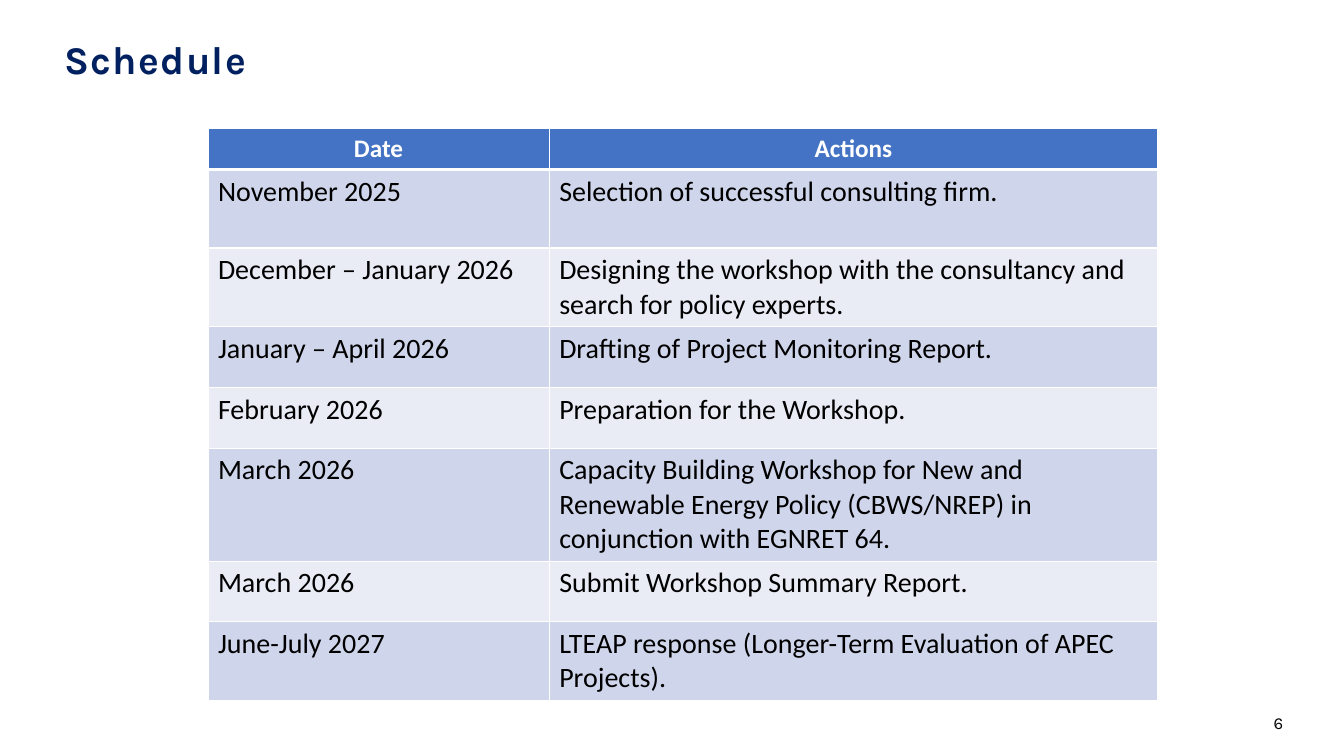
from lxml.etree import SubElement
from pptx import Presentation
from pptx.dml.color import RGBColor
from pptx.enum.text import MSO_ANCHOR, MSO_AUTO_SIZE, PP_ALIGN
from pptx.oxml.ns import qn
from pptx.util import Cm, Pt

SCHEDULE = [
    ("Date", "Actions", 1.04),
    ("November 2025", "Selection of successful consulting firm.", 1.98),
    ("December – January 2026",
     "Designing the workshop with the consultancy and search for policy experts.", 1.98),
    ("January – April 2026", "Drafting of Project Monitoring Report.", 1.53),
    ("February 2026", "Preparation for the Workshop.", 1.53),
    ("March 2026",
     "Capacity Building Workshop for New and Renewable Energy Policy (CBWS/NREP) "
     "in conjunction with EGNRET 64.", 2.6),
    ("March 2026", "Submit Workshop Summary Report.", 1.53),
    ("June-July 2027", "LTEAP response (Longer-Term Evaluation of APEC Projects).", 1.53),
]


def colour(code):
    return RGBColor.from_string(code)


def apply(target, values):
    for name, value in values.items():
        setattr(target, name, value)


class SlideBuilder:
    """Holds the style and the current slide, and adds each kind of element."""

    fonts = {
        "title": {"name": "Karla", "size": Pt(28), "bold": True},
        "number": {"name": "Karla", "size": Pt(12), "bold": False},
        "header": {"name": "Calibri", "size": Pt(18), "bold": True},
        "body": {"name": "Calibri", "size": Pt(20), "bold": False},
    }
    inks = {"title": "002060", "number": "000000", "header": "FFFFFF", "body": "000000"}
    header_fill = "4472C4"
    band_fills = ("E9EBF5", "CFD5EA")
    border = "FFFFFF"

    def __init__(self, deck):
        self.page = deck.slides.add_slide(deck.slide_layouts[5])

    def add_text(self, frame, text, style, **layout):
        para = frame.paragraphs[0]
        apply(para, layout)
        span = para.add_run()
        span.text = text
        apply(span.font, self.fonts[style])
        span.font.color.rgb = colour(self.inks[style])
        return span

    def title(self, text, left, top, width, height):
        box = self.page.shapes.title
        apply(box, {"left": Cm(left), "top": Cm(top), "width": Cm(width), "height": Cm(height)})
        apply(box.text_frame, {"vertical_anchor": MSO_ANCHOR.TOP, "word_wrap": True,
                               "auto_size": MSO_AUTO_SIZE.NONE})
        span = self.add_text(box.text_frame, text, "title", alignment=PP_ALIGN.JUSTIFY,
                             line_spacing=0.98, space_before=Pt(0), space_after=Pt(8))
        span._r.get_or_add_rPr().set("spc", "100")
        box.text_frame.paragraphs[0]._p.get_or_add_pPr().set("marL", str(Cm(0.89)))

    def number(self, text, left, top, width, height):
        box = self.page.shapes.add_textbox(Cm(left), Cm(top), Cm(width), Cm(height))
        apply(box.text_frame, {"vertical_anchor": MSO_ANCHOR.MIDDLE, "word_wrap": True})
        self.add_text(box.text_frame, text, "number", alignment=PP_ALIGN.RIGHT)

    def edge(self, cell, side, points):
        line = SubElement(cell._tc.get_or_add_tcPr(), qn(f"a:ln{side}"), w=str(Pt(points)))
        fill = SubElement(line, qn("a:solidFill"))
        SubElement(fill, qn("a:srgbClr"), val=self.border)

    def table(self, rows, left, top, widths):
        heights = [row[-1] for row in rows]
        frame = self.page.shapes.add_table(len(rows), len(widths), Cm(left), Cm(top),
                                           Cm(sum(widths)), Cm(sum(heights)))
        grid = frame.table
        for column, width in zip(grid.columns, widths):
            column.width = Cm(width)
        for index, (*texts, height) in enumerate(rows):
            grid.rows[index].height = Cm(height)
            header = index == 0
            fill = self.header_fill if header else self.band_fills[index % 2]
            for column, text in enumerate(texts):
                cell = grid.cell(index, column)
                for side in "LRTB":
                    thick = (header and side == "B") or (index == 1 and side == "T")
                    self.edge(cell, side, 3 if thick else 1)
                cell.fill.solid()
                cell.fill.fore_color.rgb = colour(fill)
                self.add_text(cell.text_frame, text, "header" if header else "body",
                              alignment=PP_ALIGN.CENTER if header else PP_ALIGN.LEFT)


def main():
    deck = Presentation()
    apply(deck, {"slide_width": Cm(33.87), "slide_height": Cm(19.05)})
    builder = SlideBuilder(deck)
    builder.title("Schedule", 0.48, 0.81, 16.43, 1.45)
    builder.table(SCHEDULE, 5.24, 3.23, (8.6, 15.34))
    builder.number("6", 24.97, 17.7, 7.62, 1.01)
    deck.save("out.pptx")


if __name__ == "__main__":
    main()
